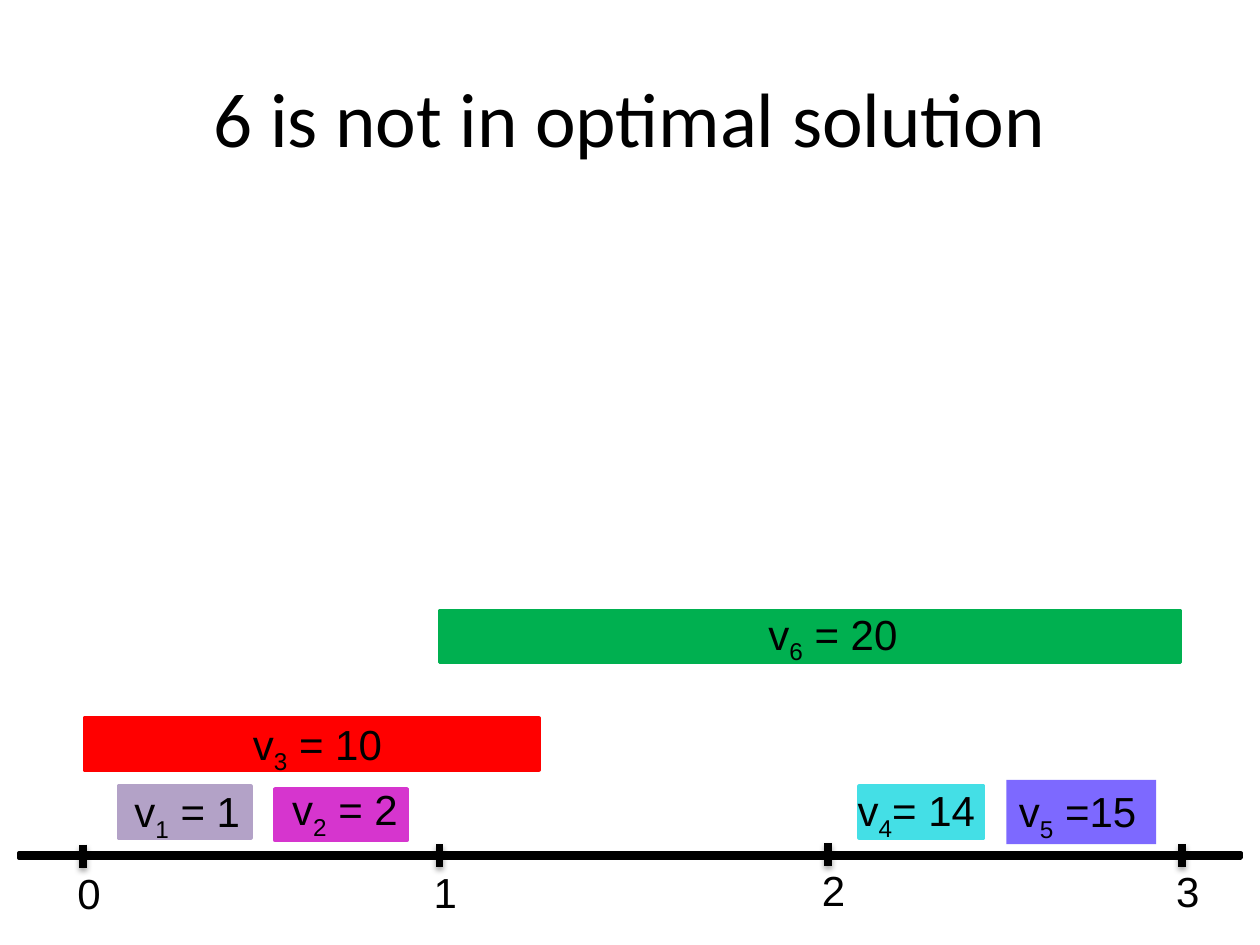
from lxml import etree
from pptx import Presentation
from pptx.dml.color import RGBColor
from pptx.enum.shapes import MSO_CONNECTOR, MSO_SHAPE
from pptx.enum.text import MSO_ANCHOR, PP_ALIGN
from pptx.oxml.ns import qn
from pptx.util import Cm, Pt

RECT, STRAIGHT = MSO_SHAPE.RECTANGLE, MSO_CONNECTOR.STRAIGHT
TOP, MIDDLE = MSO_ANCHOR.TOP, MSO_ANCHOR.MIDDLE
LEFT, CENTER = PP_ALIGN.LEFT, PP_ALIGN.CENTER

BLACK = RGBColor(0x00, 0x00, 0x00)
LILAC = RGBColor(0xB3, 0xA2, 0xC7)
MAGENTA = RGBColor(0xD6, 0x35, 0xCE)
RED = RGBColor(0xFF, 0x00, 0x00)
CYAN = RGBColor(0x44, 0xDF, 0xE6)
VIOLET = RGBColor(0x7D, 0x69, 0xFF)
GREEN = RGBColor(0x00, 0xB0, 0x50)

BAR_H, LABEL_H, TICK_H = 1.04, 1.3, 0.46

# index, rest of label, colour, bar (left, top, width), label (dx, dy, width)
INTERVALS = [
    ("3", " = 10", RED, (1.7, 14.48, 9.17), (3.15, -0.13, 3.66)),
    ("1", " = 1", LILAC, (2.39, 15.85, 2.67), (0.07, -0.13, 3.07)),
    ("2", " = 2", MAGENTA, (5.54, 15.9, 2.67), (0.1, -0.23, 3.07)),
    ("4", "= 14", CYAN, (17.32, 15.85, 2.51), (-0.28, -0.15, 3.12)),
    ("6", " = 20", GREEN, (8.86, 12.32, 14.94), (6.38, -0.18, 3.35)),
]
# x, tick top and number top, measured from the axis corner
TICKS = [(1.3, -0.17, 0.17), (8.48, -0.18, 0.15),
         (16.31, -0.21, 0.1), (23.45, -0.18, 0.12)]


def write(shape, runs, size=24, font="Arial", align=LEFT, anchor=TOP):
    """Fill a shape with (text, is_subscript) runs."""
    tf = shape.text_frame
    tf.word_wrap = True
    tf.vertical_anchor = anchor
    p = tf.paragraphs[0]
    p.alignment = align
    for text, subscript in runs:
        r = p.add_run()
        r.text = text
        for name, value in {"size": Pt(size), "name": font}.items():
            setattr(r.font, name, value)
        r.font.color.rgb = BLACK
        if subscript:
            r.font._element.set("baseline", "-25000")


def add_text(s, box, runs, **fmt):
    write(s.shapes.add_textbox(*map(Cm, box)), runs, **fmt)


def add_bar(s, box, color, outlined=True):
    sp = s.shapes.add_shape(RECT, *map(Cm, box))
    sp.shadow.inherit = False
    sp.fill.solid()
    sp.fill.fore_color.rgb = color
    if outlined:
        sp.line.color.rgb = color
        sp.line.width = Pt(2)
    else:
        sp.line.fill.background()
    return sp


def add_tick(s, x, y):
    line = s.shapes.add_connector(STRAIGHT, Cm(x), Cm(y), Cm(x), Cm(y + TICK_H))
    line.line.color.rgb = BLACK
    line.line.width = Pt(4.5)
    effects = etree.SubElement(line._element.spPr, qn("a:effectLst"))
    shadow = etree.SubElement(effects, qn("a:outerShdw"), blurRad="40000",
                              dist="23000", dir="5400000", rotWithShape="0")
    color = etree.SubElement(shadow, qn("a:srgbClr"), val="000000")
    etree.SubElement(color, qn("a:alpha"), val="35000")


def add_axis(s, left, top, width, height):
    add_bar(s, (left, top, width, height), BLACK)
    for number, (x, tick_y, number_y) in enumerate(TICKS):
        add_tick(s, left + x, top + tick_y)
        add_text(s, (left + x - 0.37, top + number_y, 0.69, 0.97),
                 [(str(number), False)])


def label_runs(index, rest):
    return [("v", False), (index, True), (rest, False)]


def add_interval(s, index, rest, color, bar, label):
    left, top, width = bar
    dx, dy, label_w = label
    add_bar(s, (left, top, width, BAR_H), color)
    add_text(s, (left + dx, top + dy, label_w, LABEL_H), label_runs(index, rest))


def add_plain_interval(s, index, rest, color, box):
    """Interval without an outline that carries its own label."""
    write(add_bar(s, box, color, outlined=False), label_runs(index, rest))


def main():
    prs = Presentation()
    prs.slide_width, prs.slide_height = Cm(25.4), Cm(19.05)
    s = prs.slides.add_slide(prs.slide_layouts[6])
    add_text(s, (1.27, 0.76, 22.86, 3.18),
             [("6 is not in optimal solution", False)],
             size=44, font="Calibri", align=CENTER, anchor=MIDDLE)
    add_axis(s, 0.38, 17.2, 24.64, 0.1)
    for interval in INTERVALS:
        add_interval(s, *interval)
    add_plain_interval(s, "5", " =15", VIOLET, (20.29, 15.72, 3.02, LABEL_H))
    prs.save("out.pptx")


if __name__ == "__main__":
    main()
